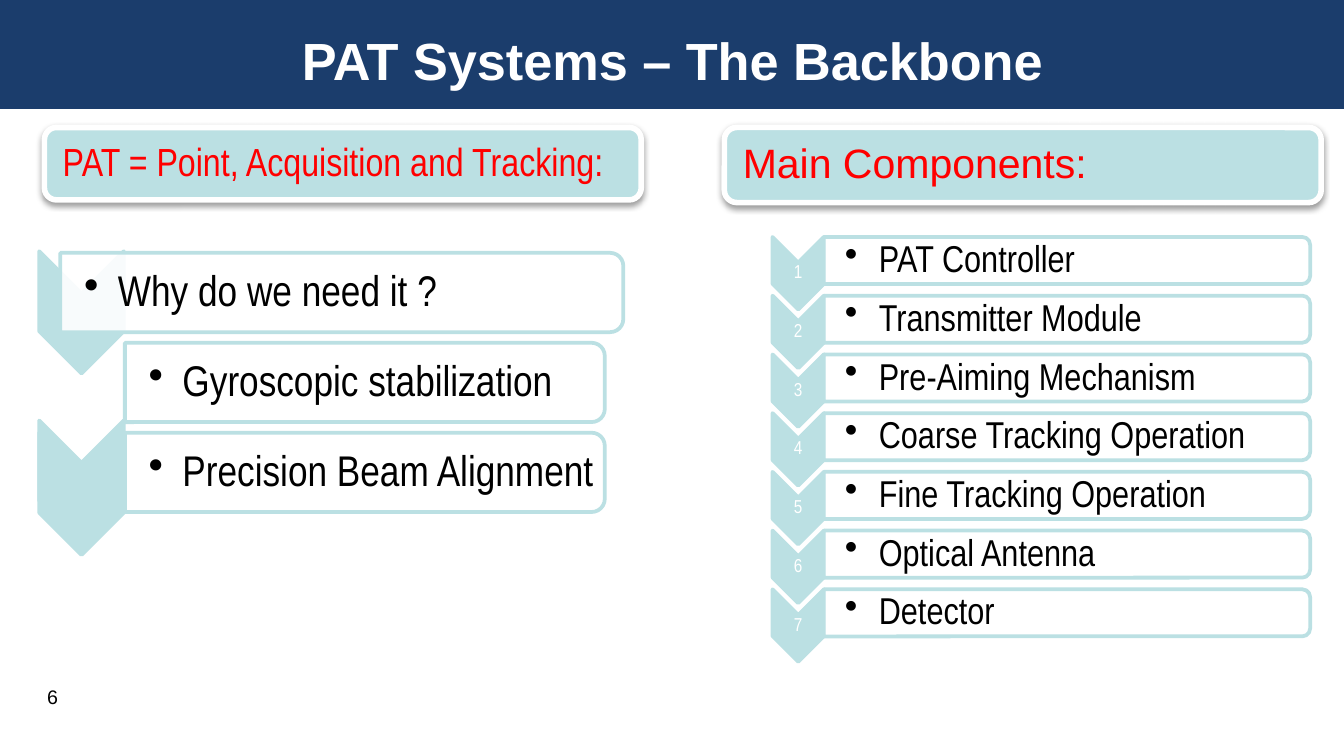
"""Build the slide that introduces PAT systems and their main components."""
import pptx
import pptx.dml.color
import pptx.enum.shapes
import pptx.enum.text
import pptx.oxml
import pptx.oxml.ns
import pptx.util
from pptx.util import Cm

NAVY = pptx.dml.color.RGBColor(0x1B, 0x3D, 0x6C)
AQUA = pptx.dml.color.RGBColor(0xBB, 0xE0, 0xE3)
RED = pptx.dml.color.RGBColor(0xFF, 0x00, 0x00)
WHITE = pptx.dml.color.RGBColor(0xFF, 0xFF, 0xFF)
BLACK = pptx.dml.color.RGBColor(0x00, 0x00, 0x00)

SHAPES = pptx.enum.shapes.MSO_SHAPE
ALIGN = pptx.enum.text.PP_ALIGN
MIDDLE = pptx.enum.text.MSO_ANCHOR.MIDDLE
NAMESPACE = pptx.oxml.ns.nsdecls("a")

SHADOW = (
    f'<a:effectLst {NAMESPACE}><a:outerShdw blurRad="39370" dist="20320" dir="5400000" '
    'rotWithShape="0"><a:srgbClr val="000000"><a:alpha val="38000"/></a:srgbClr>'
    "</a:outerShdw></a:effectLst>"
)

presentation = pptx.Presentation()
presentation.slide_width = Cm(25.4)
presentation.slide_height = Cm(14.29)
slide = presentation.slides.add_slide(presentation.slide_layouts[5])


def add_turned_shape(kind, left, top, width, height, color, alpha=100):
    """Add a shape turned by 90 degrees that covers the given area in cm."""
    shape = slide.shapes.add_shape(
        kind,
        Cm(left + (width - height) / 2),
        Cm(top + (height - width) / 2),
        Cm(height),
        Cm(width),
    )
    shape.rotation = 90
    shape.shadow.inherit = False
    shape.fill.solid()
    shape.fill.fore_color.rgb = color
    shape.line.color.rgb = AQUA
    shape.line.width = pptx.util.Pt(2)
    if alpha < 100:
        fill_color = shape.fill._xPr.find(".//" + pptx.oxml.ns.qn("a:srgbClr"))
        fill_color.append(
            pptx.oxml.parse_xml(f'<a:alpha {NAMESPACE} val="{alpha * 1000}"/>')
        )


def write_text(shape, text, size, color, font="Arial Narrow", align=ALIGN.LEFT,
               inset=0.03, left_inset=0.03, bullet=False):
    """Write one formatted paragraph into a shape, with insets in cm."""
    frame = shape.text_frame
    frame.text = text
    frame.word_wrap = True
    frame.vertical_anchor = MIDDLE
    frame.margin_left = Cm(left_inset)
    frame.margin_right = frame.margin_top = frame.margin_bottom = Cm(inset)
    paragraph = frame.paragraphs[0]
    paragraph.alignment = align
    paragraph.line_spacing = 0.9
    if bullet:
        properties = paragraph._p.get_or_add_pPr()
        properties.set("marL", str(Cm(0.64)))
        properties.set("indent", str(-Cm(0.64)))
        properties.append(pptx.oxml.parse_xml(f'<a:buChar {NAMESPACE} char="•"/>'))
    run = paragraph.runs[0]
    run.font.name = font
    run.font.size = pptx.util.Pt(size)
    run.font.color.rgb = color


title = slide.shapes.title
title.left, title.top, title.width, title.height = Cm(0.64), Cm(0.41), Cm(24.13), Cm(1.42)
write_text(title, "PAT Systems – The Backbone", 28, WHITE, "Arial", ALIGN.CENTER)
title.text_frame.paragraphs[0].line_spacing = 1.0
title.text_frame.paragraphs[0].runs[0].font.bold = True

band = slide.shapes.add_shape(SHAPES.RECTANGLE, 0, 0, presentation.slide_width, Cm(2.06))
band.shadow.inherit = False
band.fill.solid()
band.fill.fore_color.rgb = NAVY
band.line.fill.background()
title.element.addprevious(band.element)

page_number = slide.shapes.add_textbox(Cm(0.64), Cm(12.95), Cm(2.54), Cm(0.5))
write_text(page_number, "6", 10.5, BLACK, "Arial", left_inset=0.25)

headings = [
    ("PAT = Point, Acquisition and Tracking:", 0.84, 1.37, 21, "Arial Narrow"),
    ("Main Components:", 13.69, 1.42, 22, "Arial"),
]
for text, left, height, size, font in headings:
    heading = slide.shapes.add_shape(
        SHAPES.ROUNDED_RECTANGLE, Cm(left), Cm(2.41), Cm(11.28), Cm(height)
    )
    heading.fill.solid()
    heading.fill.fore_color.rgb = AQUA
    heading.line.color.rgb = WHITE
    heading.line.width = pptx.util.Pt(3)
    heading.element.spPr.append(pptx.oxml.parse_xml(SHADOW))
    write_text(heading, text, size, RED, font, inset=0.23, left_inset=0.28)

reasons = [
    ("Why do we need it ?", 4.75, 1.14, 10.64),
    ("Gyroscopic stabilization", 7.95, 2.36, 9.07),
    ("Precision Beam Alignment", 8.18, 2.36, 9.07),
]
for row, (text, chevron_top, left, width) in enumerate(reasons):
    top = 4.78 + 1.7 * row
    add_turned_shape(SHAPES.CHEVRON, 0.74, chevron_top, 1.6, 2.31, AQUA)
    add_turned_shape(SHAPES.ROUND_2_SAME_RECTANGLE, left, top, width, 1.5, WHITE, 90)
    label = slide.shapes.add_textbox(Cm(left), Cm(top + 0.07), Cm(width - 0.07), Cm(1.36))
    write_text(label, text, 23, BLACK, inset=0.04, left_inset=0.45, bullet=True)

components = [
    "PAT Controller",
    "Transmitter Module",
    "Pre-Aiming Mechanism",
    "Coarse Tracking Operation",
    "Fine Tracking Operation",
    "Optical Antenna",
    "Detector",
]
for row, text in enumerate(components):
    top = 4.48 + 1.11 * row
    add_turned_shape(SHAPES.CHEVRON, 14.6, top, 0.97, 1.37, AQUA)
    number = slide.shapes.add_textbox(Cm(14.6), Cm(top + 0.47), Cm(0.97), Cm(0.41))
    write_text(number, str(row + 1), 10, WHITE, align=ALIGN.CENTER)
    add_turned_shape(SHAPES.ROUND_2_SAME_RECTANGLE, 15.57, top, 9.19, 0.89, WHITE, 90)
    label = slide.shapes.add_textbox(Cm(15.57), Cm(top + 0.04), Cm(9.17), Cm(0.81))
    write_text(label, text, 20, BLACK, left_inset=0.4, bullet=True)

presentation.save("out.pptx")
